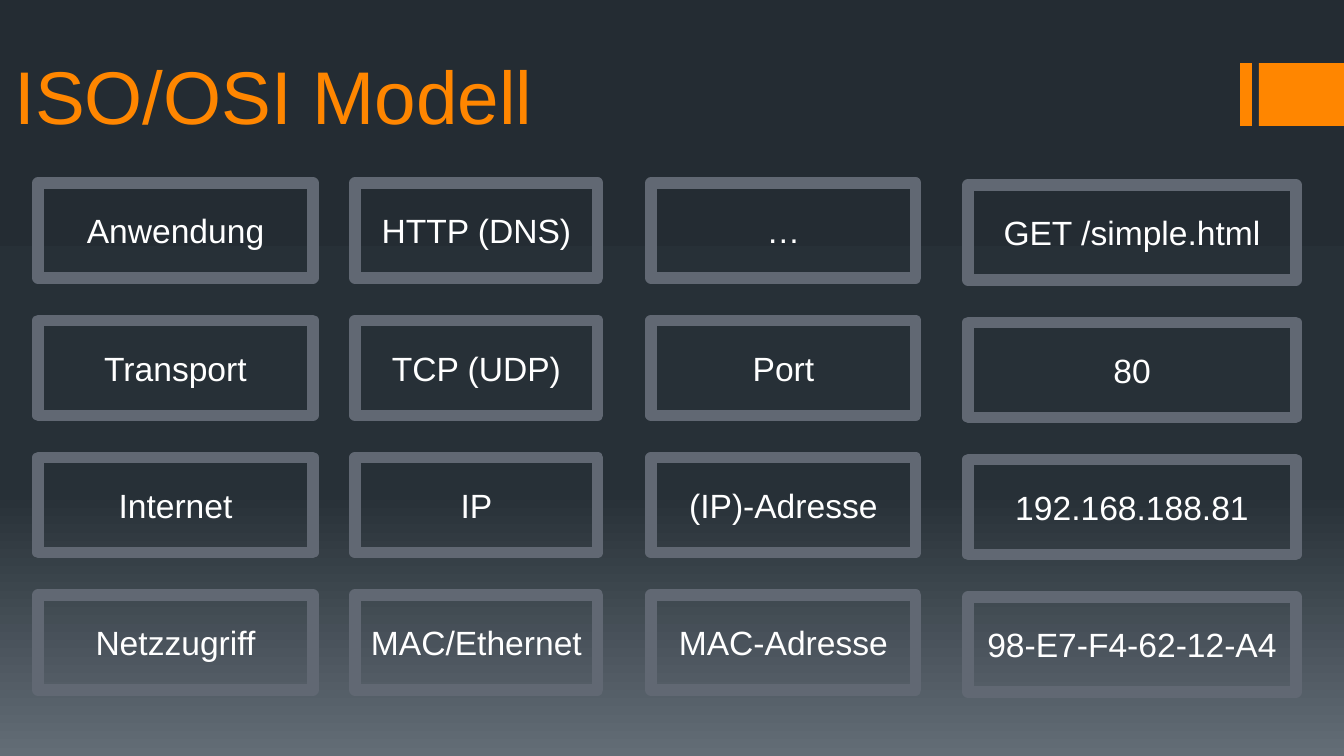
from copy import deepcopy

from pptx import Presentation
from pptx.dml.color import RGBColor
from pptx.enum import shapes, text
from pptx.oxml.ns import qn
from pptx.util import Pt

# Content: one column per aspect, one row per layer
TITLE = "ISO/OSI Modell"
COLUMNS = [  # left, width, lowering, labels from top to bottom
    (38, 275, 0, ["Anwendung", "Transport", "Internet", "Netzzugriff"]),
    (355, 243, 0, ["HTTP (DNS)", "TCP (UDP)", "IP", "MAC/Ethernet"]),
    (651, 265, 0, ["…", "Port", "(IP)-Adresse", "MAC-Adresse"]),
    (968, 328, 2, ["GET /simple.html", "80", "192.168.188.81", "98-E7-F4-62-12-A4"]),
]
BACKGROUND = [(0, "242C33"), (0.65, "273037"), (1, "636D76")]
ACCENT_BARS = [(1240, 12), (1259, 85)]  # left, width
ORANGE, GREY, WHITE = "FF8600", "616873", "FFFFFF"
FIRST_TOP, LAST_TOP, BOX_HEIGHT = 183, 595, 95
SCALE = 914400 / 134.4


def px(length):
    return round(length * SCALE)


def colour(hex_string):
    return RGBColor.from_string(hex_string)


def add_rectangle(left, top, width, height):
    rectangle = slide.shapes.add_shape(
        shapes.MSO_SHAPE.RECTANGLE, px(left), px(top), px(width), px(height))
    rectangle.shadow.inherit = False
    return rectangle


def write(frame, words, size, hex_string, align, anchor):
    frame.word_wrap = True
    frame.vertical_anchor = anchor
    paragraph = frame.paragraphs[0]
    paragraph.alignment = align
    run = paragraph.add_run()
    run.text = words
    run.font.name = "Arial"
    run.font.size = Pt(size)
    run.font.color.rgb = colour(hex_string)


deck = Presentation()
deck.slide_width, deck.slide_height = px(1344), px(756)
slide = deck.slides.add_slide(deck.slide_layouts[5])

# Background gradient, dark at the top
backdrop = slide.background.fill
backdrop.gradient()
backdrop.gradient_angle = 270
stop_list = slide.element.find(".//" + qn("a:gsLst"))
stop_list.insert(1, deepcopy(stop_list[0]))
for stop, (position, shade) in zip(backdrop.gradient_stops, BACKGROUND):
    stop.position = position
    stop.color.rgb = colour(shade)

# Accent bars at the right edge
for left, width in ACCENT_BARS:
    bar = add_rectangle(left, 63, width, 63)
    bar.fill.solid()
    bar.fill.fore_color.rgb = colour(ORANGE)
    bar.line.fill.background()

# Title
title = slide.shapes.title
title.left, title.top, title.width, title.height = px(1), px(19), px(1344), px(127)
write(title.text_frame, TITLE, 40, ORANGE, text.PP_ALIGN.LEFT, text.MSO_ANCHOR.BOTTOM)

# Layer boxes
for left, width, lowering, labels in COLUMNS:
    pitch = (LAST_TOP - FIRST_TOP) / (len(labels) - 1)
    for row, label in enumerate(labels):
        box = add_rectangle(left, FIRST_TOP + lowering + row * pitch, width, BOX_HEIGHT)
        box.fill.background()
        box.line.color.rgb = colour(GREY)
        box.line.width = Pt(6)
        write(box.text_frame, label, 18, WHITE, text.PP_ALIGN.CENTER, text.MSO_ANCHOR.MIDDLE)

deck.save("out.pptx")
